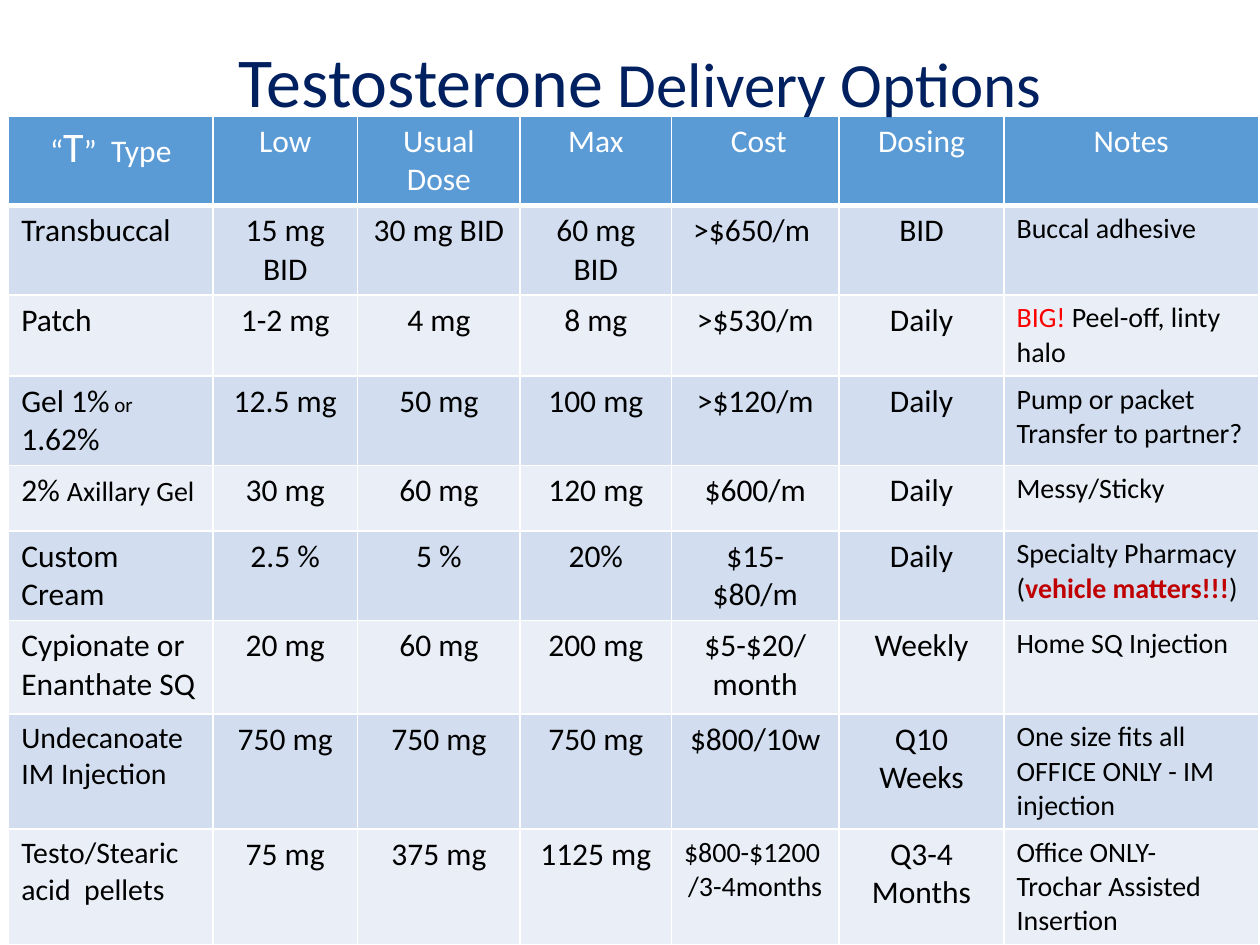
from lxml.etree import SubElement
from pptx import Presentation
from pptx.dml.color import RGBColor as RGB
from pptx.enum.text import MSO_ANCHOR as Anchor, PP_ALIGN as Align
from pptx.oxml.ns import qn
from pptx.util import Pt

HUES = {"navy": "002060", "head": "5B9BD5", "odd": "D2DEEF", "even": "EAEFF7",
        "white": "FFFFFF", "black": "000000", "red": "FF0000", "dark": "C00000"}


def write(frame, text, size=18, hue="black", align=Align.LEFT):
    """Fill a frame; text is a string or (text, changes) runs, \\n starts a paragraph."""
    runs = [(text, {})] if isinstance(text, str) else text
    para = frame.paragraphs[0]
    para.alignment = align
    for words, diff in runs:
        for i, part in enumerate(words.split("\n")):
            if i:
                para = frame.add_paragraph()
                para.alignment = align
            run = para.add_run()
            run.text = part
            font = run.font
            font.name = "Calibri"
            font.size = Pt(diff.get("size", size))
            font.bold = diff.get("bold", False)
            font.color.rgb = RGB.from_string(HUES[diff.get("hue", hue)])


def edge(cell, low):
    """Draw white borders; low is the width of the bottom one."""
    props = cell._tc.get_or_add_tcPr()
    for side in "LRTB":
        width = low if side == "B" else 1
        line = SubElement(props, qn(f"a:ln{side}"), w=str(Pt(width)))
        fill = SubElement(line, qn("a:solidFill"))
        SubElement(fill, qn("a:srgbClr"), val=HUES["white"])


deck = Presentation()
deck.slide_width, deck.slide_height = Pt(720), Pt(540)
slide = deck.slides.add_slide(deck.slide_layouts[5])

# Table of options
rows = [
    [[("“", {}), ("T", {"size": 24}), ("”  Type", {})],
     "Low", "Usual Dose", "Max", " Cost", "Dosing", "Notes"],
    ["Transbuccal", "15 mg BID", "30 mg BID", "60 mg BID", ">$650/m ", "BID",
     "Buccal adhesive"],
    ["Patch", "1-2 mg", "4 mg", "8 mg", ">$530/m", "Daily",
     [("BIG! ", {"hue": "red"}), ("Peel-off, linty halo", {})]],
    [[("Gel 1%", {}), (" or ", {"size": 12}), ("1.62%", {})],
     "12.5 mg", "50 mg", "100 mg", ">$120/m", "Daily",
     "Pump or packet\nTransfer to partner?"],
    [[("2% ", {}), ("Axillary Gel", {"size": 16})],
     "30 mg", "60 mg", "120 mg", "$600/m", "Daily", "Messy/Sticky"],
    ["Custom Cream", "2.5 %", "5 %", "20%", "$15-$80/m", "Daily",
     [("Specialty Pharmacy\n(", {}),
      ("vehicle matters!!!", {"hue": "dark", "bold": True}), (")", {})]],
    ["Cypionate or\nEnanthate SQ", "20 mg", "60 mg", "200 mg", "$5-$20/ month",
     "Weekly", "Home SQ Injection"],
    [[("Undecanoate\nIM Injection", {"size": 17})],
     "750 mg", "750 mg", "750 mg", "$800/10w", "Q10 Weeks",
     "One size fits all OFFICE ONLY - IM injection"],
    [[("Testo/Stearic acid  pellets", {"size": 17})],
     "75 mg", "375 mg", "1125 mg", [("$800-$1200 \n/3-4months", {"size": 16})],
     "Q3-4 Months", "Office ONLY- Trochar Assisted Insertion"],
]
wide = [116.6, 82.8, 92.9, 86.4, 95.8, 94.3, 145.4]
high = [29.5, 39.6, 36.7, 43.9, 37.4, 39.6, 53.3, 57.6, 59]

grid = slide.shapes.add_table(len(rows), len(wide), Pt(5), Pt(66.2),
                              Pt(sum(wide)), Pt(sum(high))).table
for col, width in zip(grid.columns, wide):
    col.width = Pt(width)
for row, height in zip(grid.rows, high):
    row.height = Pt(height)

last = len(wide) - 1
for r, row in enumerate(rows):
    for c, text in enumerate(row):
        cell = grid.cell(r, c)
        head = r == 0
        edge(cell, 3 if head else 1)
        cell.fill.solid()
        tint = "head" if head else "odd" if r % 2 else "even"
        cell.fill.fore_color.rgb = RGB.from_string(HUES[tint])
        write(cell.text_frame, text,
              size=16 if c == last and not head else 18,
              hue="white" if head else "black",
              align=Align.CENTER if head or 0 < c < last else Align.LEFT)

# Title, in front of the table
title = slide.shapes.title
title.left, title.top, title.width, title.height = Pt(77.8), Pt(18), Pt(576), Pt(55.4)
title.text_frame.vertical_anchor = Anchor.TOP
title.text_frame.word_wrap = True
write(title.text_frame, [("Testosterone", {"size": 40}), (" Delivery Options", {})],
      size=36, hue="navy", align=Align.CENTER)
title.element.getparent().append(title.element)

deck.save("out.pptx")
